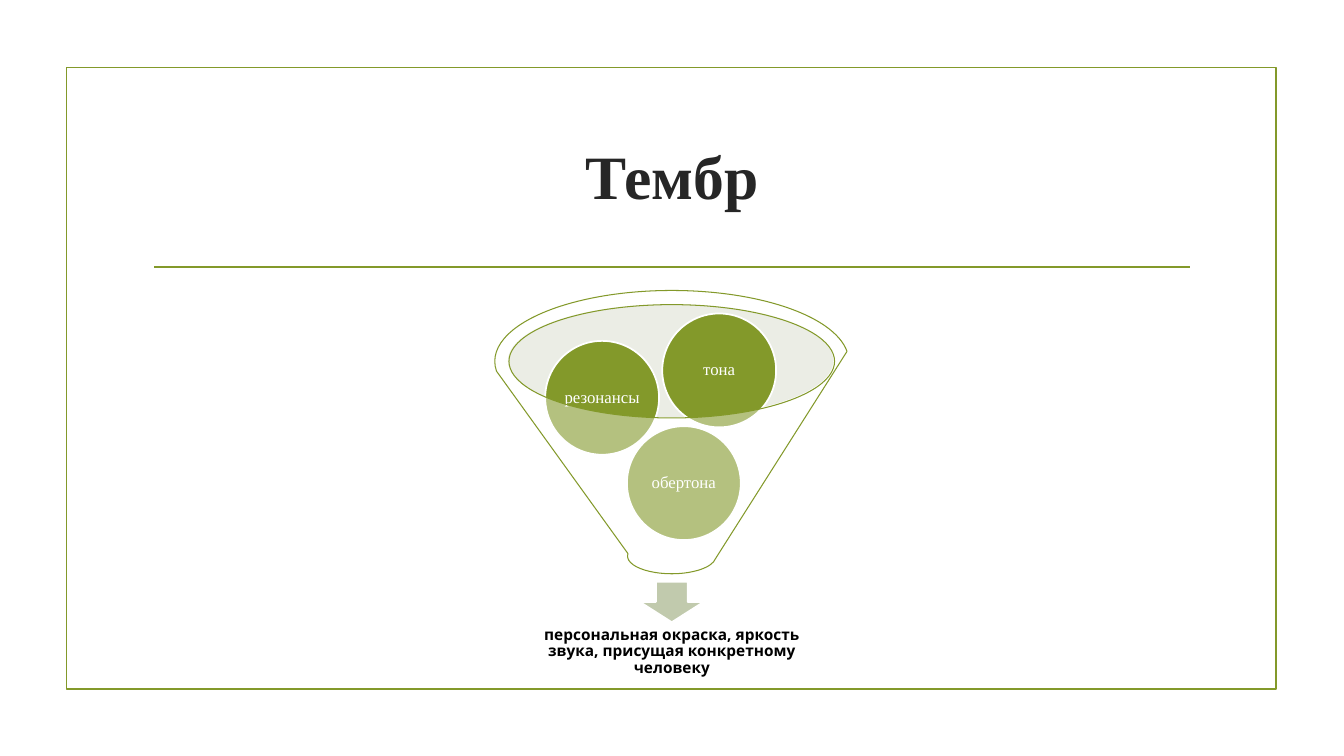
from dataclasses import dataclass
from typing import NamedTuple, Optional

from lxml import etree
from pptx import Presentation
from pptx import util as u
from pptx.dml.color import RGBColor
from pptx.enum import shapes, text
from pptx.oxml.ns import qn


@dataclass(frozen=True)
class Theme:
    olive: str = "83992A"
    rim: str = "CDD4BE"
    arrow: str = "C1CAAD"
    white: str = "FFFFFF"
    title: str = "262626"
    black: str = "000000"
    serif: str = "Times New Roman"
    sans: str = "Open Sans"
    title_size: float = 44
    ball_size: float = 12
    caption_size: float = 11
    line: float = 1.25
    thin_line: float = 0.75
    glass_alpha: int = 40  # per cent


class Box(NamedTuple):
    """Left, top, width and height in centimetres."""
    left: float
    top: float
    width: float
    height: float

    def lengths(self) -> list:
        return [u.Cm(v) for v in self]


class Ball(NamedTuple):
    label: str
    left: float
    top: float


THEME = Theme()
BALL_DIAMETER = 2.87
BALLS = [
    Ball("обертона", 15.8, 10.74),
    Ball("резонансы", 13.74, 8.59),
    Ball("тона", 16.69, 7.9),
]


def add_shape(s, kind, box: Box, fill: Optional[str] = None, line: Optional[str] = None,
              weight: float = THEME.line, alpha: Optional[int] = None):
    """Draw a preset shape; no colour means no fill or no line, alpha is in per cent."""
    sp = s.shapes.add_shape(kind, *box.lengths())
    sp.shadow.inherit = False
    if fill:
        sp.fill.solid()
        sp.fill.fore_color.rgb = RGBColor.from_string(fill)
        if alpha is not None:
            clr = sp.fill._xPr.find(qn("a:solidFill"))[0]
            etree.SubElement(clr, qn("a:alpha"), val=str(alpha * 1000))
    else:
        sp.fill.background()
    if line:
        sp.line.color.rgb = RGBColor.from_string(line)
        sp.line.width = u.Pt(weight)
    else:
        sp.line.fill.background()
    return sp


def write(sp, words: str, font: str, size: float, color: str,
          bold: bool = False, inset: float = 0.23) -> None:
    """Centre one paragraph in a shape, with equal insets in centimetres."""
    tf = sp.text_frame
    tf.word_wrap = True
    tf.vertical_anchor = text.MSO_ANCHOR.MIDDLE
    tf.margin_left = tf.margin_right = tf.margin_top = tf.margin_bottom = u.Cm(inset)
    p = tf.paragraphs[0]
    p.text = words
    p.alignment = text.PP_ALIGN.CENTER
    p.line_spacing = 0.9
    p.font.name = font
    p.font.size = u.Pt(size)
    p.font.bold = bold
    p.font.color.rgb = RGBColor.from_string(color)


def add_rule(s, left: float, right: float, top: float) -> None:
    line = s.shapes.add_connector(shapes.MSO_CONNECTOR.STRAIGHT,
                                  u.Cm(left), u.Cm(top), u.Cm(right), u.Cm(top))
    line.line.color.rgb = RGBColor.from_string(THEME.olive)
    line.line.width = u.Pt(THEME.line)
    etree.SubElement(line._element.spPr, qn("a:effectLst"))


def add_header(s) -> None:
    add_shape(s, shapes.MSO_SHAPE.RECTANGLE, Box(1.68, 1.7, 30.48, 15.67), line=THEME.olive)
    add_rule(s, 3.89, 30, 6.73)
    title = s.shapes.add_textbox(*Box(3.61, 2.72, 26.67, 3.63).lengths())
    write(title, "Тембр", THEME.serif, THEME.title_size, THEME.title, bold=True)


def add_funnel(s) -> None:
    """Draw the balls between the rim and the half-clear glass, with the outcome below."""
    add_shape(s, shapes.MSO_SHAPE.OVAL, Box(12.8, 7.67, 8.2, 2.84),
              fill=THEME.rim, alpha=THEME.glass_alpha)
    add_shape(s, shapes.MSO_SHAPE.DOWN_ARROW, Box(16.13, 14.66, 1.6, 1.02),
              fill=THEME.arrow, line=THEME.white)
    caption = s.shapes.add_textbox(*Box(13.11, 15.47, 7.65, 1.91).lengths())
    write(caption, "персональная окраска, яркость звука, присущая конкретному человеку",
          THEME.sans, THEME.caption_size, THEME.black, bold=True)
    for ball in BALLS:
        sp = add_shape(s, shapes.MSO_SHAPE.OVAL,
                       Box(ball.left, ball.top, BALL_DIAMETER, BALL_DIAMETER),
                       fill=THEME.olive, line=THEME.white)
        write(sp, ball.label, THEME.serif, THEME.ball_size, THEME.white, inset=0.04)
    add_shape(s, shapes.MSO_SHAPE.FUNNEL, Box(12.47, 7.32, 8.92, 7.14), fill=THEME.white,
              line=THEME.olive, weight=THEME.thin_line, alpha=THEME.glass_alpha)


def main() -> None:
    prs = Presentation()
    prs.slide_width, prs.slide_height = u.Cm(33.87), u.Cm(19.05)
    s = prs.slides.add_slide(prs.slide_layouts[6])
    add_header(s)
    add_funnel(s)
    prs.save("out.pptx")


if __name__ == "__main__":
    main()
